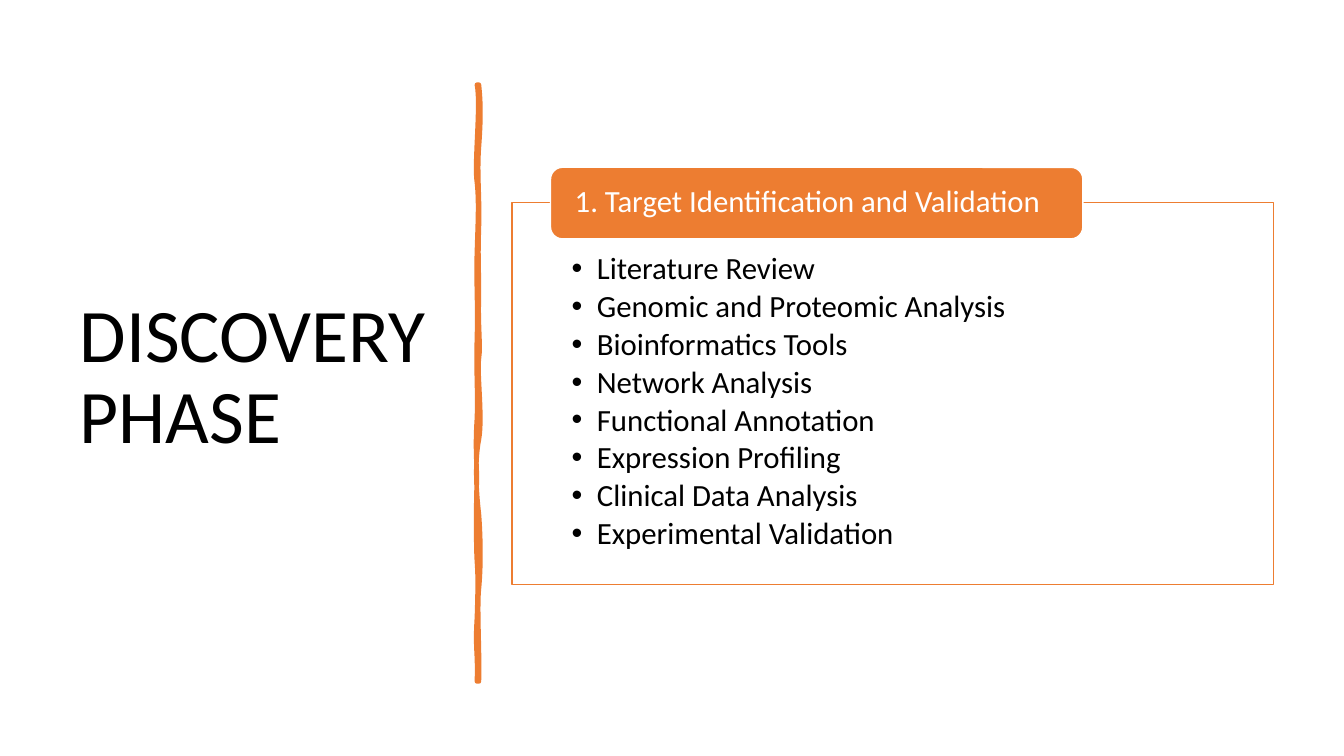
from dataclasses import dataclass

from lxml import etree
from pptx import Presentation
from pptx.dml.color import RGBColor
from pptx.enum.shapes import MSO_SHAPE
from pptx.enum.text import MSO_ANCHOR, MSO_AUTO_SIZE, PP_ALIGN
from pptx.oxml.ns import qn
from pptx.slide import Slide
from pptx.text.text import TextFrame, _Paragraph
from pptx.util import Inches, Pt

RECTANGLE, ROUNDED = MSO_SHAPE.RECTANGLE, MSO_SHAPE.ROUNDED_RECTANGLE
TOP, MIDDLE = MSO_ANCHOR.TOP, MSO_ANCHOR.MIDDLE
LEFT = PP_ALIGN.LEFT
NO_AUTOFIT = MSO_AUTO_SIZE.NONE

ORANGE = RGBColor(0xED, 0x7D, 0x31)
WHITE = RGBColor(0xFF, 0xFF, 0xFF)
BLACK = RGBColor(0x00, 0x00, 0x00)
FONT = "Calibri"

Point = tuple[float, float]
Bounds = tuple[float, float, float, float]
TITLE_ONLY = 5

# Hand-drawn divider: each curve has two control points and an end point
DIVIDER_START: Point = (4.75, 0.84)
DIVIDER_CURVES: list[tuple[Point, Point, Point]] = [
    ((4.77, 1.02), (4.77, 1.19), (4.75, 1.46)),
    ((4.73, 1.73), (4.76, 1.95), (4.75, 2.26)),
    ((4.74, 2.57), (4.75, 2.62), (4.75, 2.94)),
    ((4.74, 3.25), (4.77, 3.42), (4.75, 3.56)),
    ((4.73, 3.7), (4.79, 4.14), (4.75, 4.36)),
    ((4.71, 4.57), (4.72, 4.84), (4.75, 5.1)),
    ((4.77, 5.36), (4.77, 5.64), (4.75, 5.84)),
    ((4.73, 6.03), (4.76, 6.5), (4.75, 6.76)),
    ((4.74, 6.76), (4.73, 6.76), (4.73, 6.76)),
    ((4.74, 6.46), (4.71, 6.44), (4.73, 6.13)),
    ((4.74, 5.83), (4.74, 5.7), (4.73, 5.57)),
    ((4.72, 5.44), (4.72, 4.95), (4.73, 4.77)),
    ((4.73, 4.59), (4.71, 4.45), (4.73, 4.15)),
    ((4.74, 3.86), (4.72, 3.73), (4.73, 3.35)),
    ((4.74, 2.98), (4.72, 2.81), (4.73, 2.5)),
    ((4.74, 2.18), (4.75, 2.0), (4.73, 1.81)),
    ((4.7, 1.63), (4.77, 1.04), (4.73, 0.84)),
]


@dataclass(frozen=True)
class Panel:
    shape: MSO_SHAPE
    bounds: Bounds
    fill: RGBColor
    outline: RGBColor
    text_bounds: Bounds
    insets: Bounds
    lines: list[str]
    text_color: RGBColor
    anchor: MSO_ANCHOR
    bulleted: bool


PANELS = [
    Panel(RECTANGLE, (5.08, 2.01, 7.55, 3.79), WHITE, ORANGE,
          (5.08, 2.01, 7.55, 3.79), (0.59, 0.5, 0.59, 0.17),
          ["Literature Review", "Genomic and Proteomic Analysis",
           "Bioinformatics Tools", "Network Analysis",
           "Functional Annotation", "Expression Profiling",
           "Clinical Data Analysis", "Experimental Validation"],
          BLACK, TOP, True),
    Panel(ROUNDED, (5.46, 1.66, 5.28, 0.71), ORANGE, WHITE,
          (5.5, 1.69, 5.21, 0.64), (0.2, 0, 0.2, 0),
          ["1. Target Identification and Validation"],
          WHITE, MIDDLE, False),
]


def format_text(frame: TextFrame, size: float, color: RGBColor) -> None:
    frame.word_wrap = True
    frame.auto_size = NO_AUTOFIT
    for paragraph in frame.paragraphs:
        paragraph.alignment = LEFT
        paragraph.line_spacing = 0.9
        paragraph.space_before = Pt(0)
        for run in paragraph.runs:
            run.font.name = FONT
            run.font.size = Pt(size)
            run.font.color.rgb = color


def add_bullet(paragraph: _Paragraph) -> None:
    paragraph.level = 1
    paragraph.space_after = Pt(3.3)
    properties = paragraph._p.get_or_add_pPr()
    properties.set("marL", str(Inches(0.25)))
    properties.set("indent", str(Inches(-0.25)))
    etree.SubElement(properties, qn("a:buFont"), typeface="Arial")
    etree.SubElement(properties, qn("a:buChar"), char="•")


def add_title(page: Slide, text: str) -> None:
    title = page.shapes.title
    title.left, title.top = Inches(0.69), Inches(0.7)
    title.width, title.height = Inches(3.74), Inches(6.11)
    title.text_frame.text = text
    title.text_frame.vertical_anchor = MIDDLE
    format_text(title.text_frame, 54, BLACK)


def add_divider(page: Slide) -> None:
    builder = page.shapes.build_freeform(*map(Inches, DIVIDER_START))
    ends = [(Inches(x), Inches(y)) for _, _, (x, y) in DIVIDER_CURVES]
    builder.add_line_segments(ends, close=True)
    divider = builder.convert_to_shape()
    divider.shadow.inherit = False
    divider.fill.solid()
    divider.fill.fore_color.rgb = ORANGE
    divider.line.color.rgb = ORANGE
    divider.line.width = Pt(3.25)
    # Turn each straight segment into its cubic curve
    segments = list(divider._element.iter(qn("a:lnTo")))
    for segment, curve in zip(segments, DIVIDER_CURVES):
        bend = etree.Element(qn("a:cubicBezTo"))
        for x, y in curve:
            etree.SubElement(bend, qn("a:pt"),
                             x=str(Inches(x) - divider.left),
                             y=str(Inches(y) - divider.top))
        segment.getparent().replace(segment, bend)
    # Round joins keep the stroke soft
    etree.SubElement(divider.line._get_or_add_ln(), qn("a:round"))


def add_panel(page: Slide, panel: Panel) -> None:
    box = page.shapes.add_shape(panel.shape, *map(Inches, panel.bounds))
    box.shadow.inherit = False
    box.fill.solid()
    box.fill.fore_color.rgb = panel.fill
    box.line.color.rgb = panel.outline
    box.line.width = Pt(1)

    label = page.shapes.add_textbox(*map(Inches, panel.text_bounds))
    frame = label.text_frame
    (frame.margin_left, frame.margin_top,
     frame.margin_right, frame.margin_bottom) = map(Inches, panel.insets)
    frame.vertical_anchor = panel.anchor
    frame.text = "\n".join(panel.lines)
    if panel.bulleted:
        for paragraph in frame.paragraphs:
            add_bullet(paragraph)
    format_text(frame, 22, panel.text_color)


def main() -> None:
    deck = Presentation()
    deck.slide_width, deck.slide_height = Inches(13.33), Inches(7.5)
    page = deck.slides.add_slide(deck.slide_layouts[TITLE_ONLY])
    add_title(page, "DISCOVERY PHASE")
    add_divider(page)
    for panel in PANELS:
        add_panel(page, panel)
    deck.save("out.pptx")


if __name__ == "__main__":
    main()
